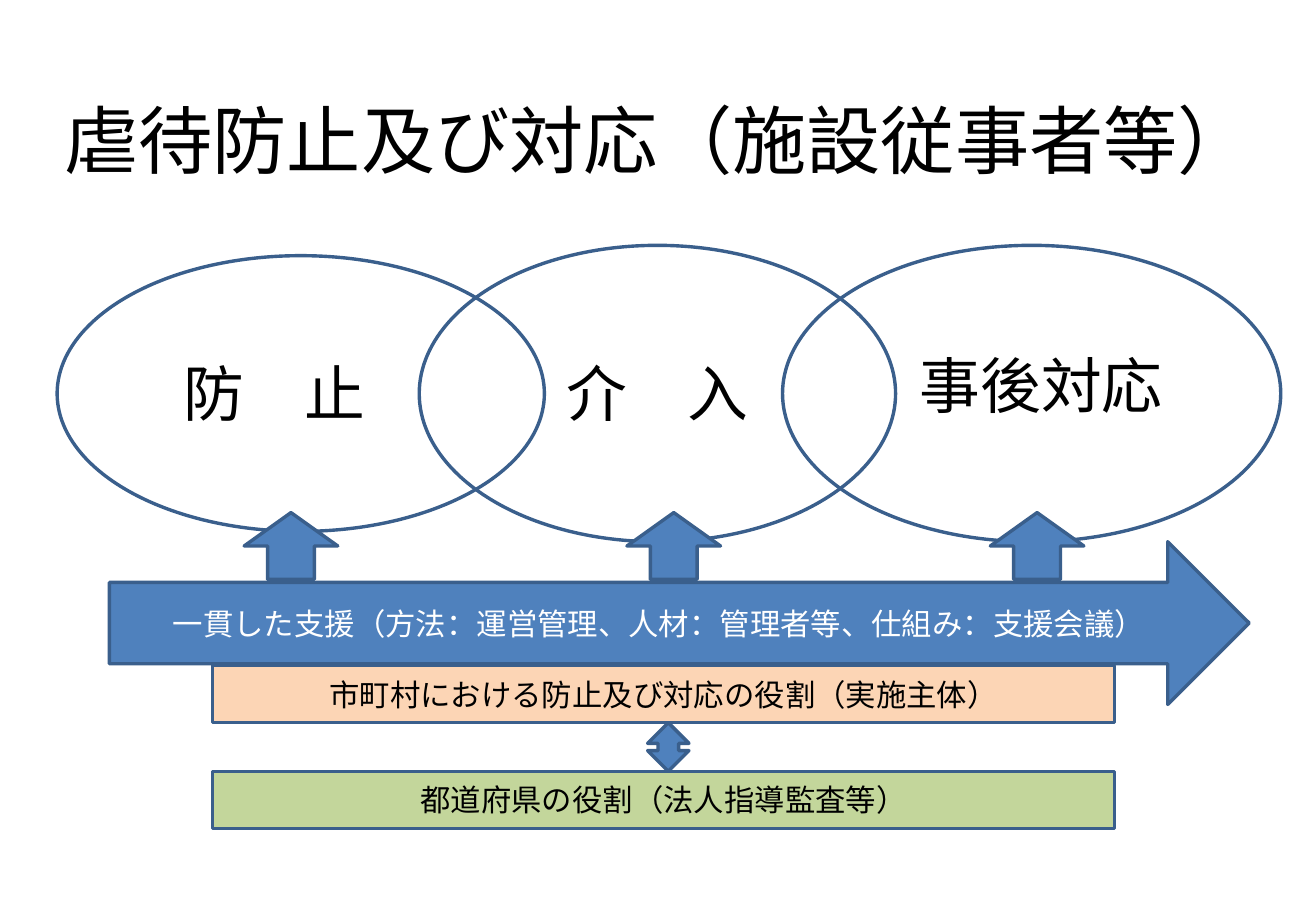
from pptx import Presentation
from pptx.dml.color import RGBColor
from pptx.enum.shapes import MSO_SHAPE
from pptx.enum.text import MSO_ANCHOR, PP_ALIGN
from pptx.util import Inches, Pt

OVAL = MSO_SHAPE.OVAL
RECTANGLE = MSO_SHAPE.RECTANGLE
RIGHT_ARROW = MSO_SHAPE.RIGHT_ARROW
UP_ARROW = MSO_SHAPE.UP_ARROW
UP_DOWN_ARROW = MSO_SHAPE.UP_DOWN_ARROW
MIDDLE, TOP = MSO_ANCHOR.MIDDLE, MSO_ANCHOR.TOP
CENTER, LEFT = PP_ALIGN.CENTER, PP_ALIGN.LEFT

COLORS = {
    "text": "000000",
    "white": "FFFFFF",
    "outline": "3A5F8C",
    "arrow": "4F81BD",
    "municipality": "FCD5B5",
    "prefecture": "C3D69B",
}


def color(name):
    return RGBColor.from_string(COLORS[name])


def lengths(left, top, width, height):
    return [Inches(value) for value in (left, top, width, height)]


def write(shape, text, size, ink="text", font="Calibri", align=CENTER, anchor=MIDDLE):
    frame = shape.text_frame
    frame.word_wrap = True
    frame.vertical_anchor = anchor
    para = frame.paragraphs[0]
    para.alignment = align
    span = para.add_run()
    span.text = text
    for name, value in {"name": font, "size": Pt(size)}.items():
        setattr(span.font, name, value)
    span.font.color.rgb = color(ink)


def add_outlined(page, kind, box, fill=None):
    shape = page.shapes.add_shape(kind, *lengths(*box))
    shape.shadow.inherit = False
    if fill:
        shape.fill.solid()
        shape.fill.fore_color.rgb = color(fill)
    else:
        shape.fill.background()
    shape.line.color.rgb = color("outline")
    shape.line.width = Pt(2)
    return shape


def add_title(page, box):
    title = page.shapes.title
    for name, value in zip(("left", "top", "width", "height"), lengths(*box)):
        setattr(title, name, value)
    write(title, "虐待防止及び対応（施設従事者等）", 44)


def add_phases(page, box):
    left, top, width, height = box
    phases = [
        ("防　止", 0, 4.01, 2.27, 0.94, 0.86, 1.79),
        ("介　入", 2.98, 3.92, height, 4.09, 0.86, 1.79),
        ("事後対応", width - 4.1, 4.1, height, 7, 0.79, 2.39),
    ]
    for text, offset, oval_width, oval_height, text_x, text_y, text_width in phases:
        oval_top = top + (height - oval_height) / 2
        add_outlined(page, OVAL, (left + offset, oval_top, oval_width, oval_height))
        label = page.shapes.add_textbox(
            *lengths(left + text_x, top + text_y, text_width, 0.71))
        write(label, text, 36, font="Arial", align=LEFT, anchor=TOP)


def add_support(page, box):
    left, top, width, height = box
    arrow = add_outlined(page, RIGHT_ARROW, box, "arrow")
    write(arrow, "一貫した支援（方法：運営管理、人材：管理者等、仕組み：支援会議）", 18, "white")
    for offset in (1.11, 4.26, 7.25):
        add_outlined(page, UP_ARROW, (left + offset, top - 0.24, 0.77, 0.55), "arrow")


def add_roles(page, box):
    left, top, width, height = box
    bar_height = 0.47
    roles = [
        ("市町村における防止及び対応の役割（実施主体）", "municipality", top),
        ("都道府県の役割（法人指導監査等）", "prefecture", top + height - bar_height),
    ]
    for text, fill, bar_top in roles:
        bar = add_outlined(page, RECTANGLE, (left, bar_top, width, bar_height), fill)
        write(bar, text, 18)
    gap = height - 2 * bar_height
    add_outlined(page, UP_DOWN_ARROW, (left + 3.58, top + bar_height, 0.34, gap), "arrow")


def main():
    deck = Presentation()
    deck.slide_width = Inches(10.83)
    deck.slide_height = Inches(7.5)
    page = deck.slides.add_slide(deck.slide_layouts[5])
    add_title(page, (0.3, 0.52, 10.24, 1.25))
    add_phases(page, (0.47, 2.02, 10.07, 2.44))
    add_support(page, (0.9, 4.46, 9.38, 1.34))
    add_roles(page, (1.75, 5.48, 7.42, 1.34))
    deck.save("out.pptx")


if __name__ == "__main__":
    main()
